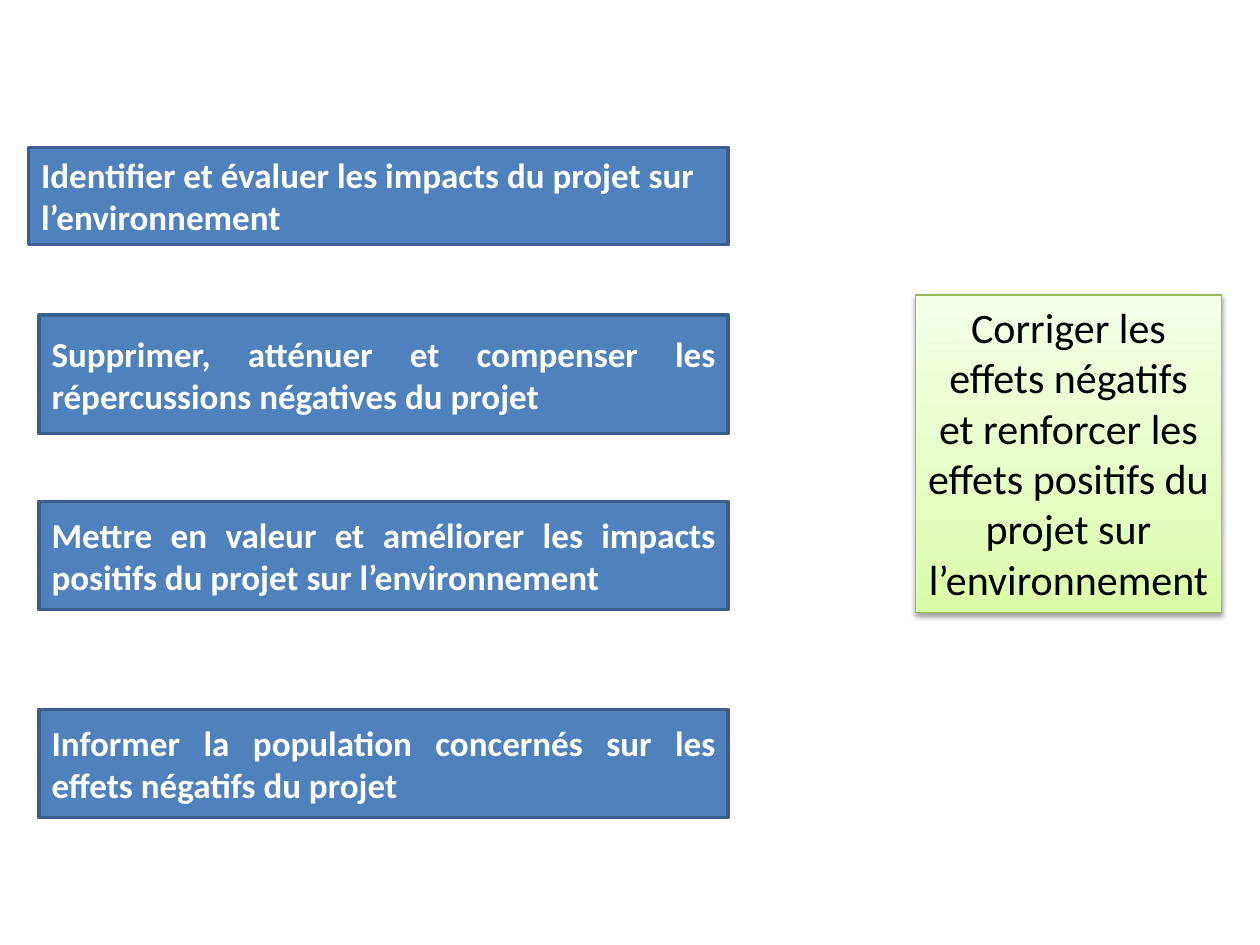
from lxml.etree import SubElement
from pptx import Presentation
from pptx.dml.color import RGBColor
from pptx.enum.shapes import MSO_SHAPE as Shape
from pptx.enum.text import MSO_ANCHOR as Anchor, MSO_AUTO_SIZE as AutoSize, PP_ALIGN as Align
from pptx.oxml.ns import qn
from pptx.util import Cm, Pt

WHITE = RGBColor(0xFF, 0xFF, 0xFF)
BLACK = RGBColor(0x00, 0x00, 0x00)
BLUE = RGBColor(0x4F, 0x81, 0xBD)
DARK_BLUE = RGBColor(0x3A, 0x5F, 0x8C)
GREEN = RGBColor(0x98, 0xB9, 0x55)
GREEN_STOPS = (
    (0, RGBColor(0xDA, 0xFD, 0xA7)),
    (35, RGBColor(0xE4, 0xFC, 0xC2)),
    (100, RGBColor(0xF5, 0xFF, 0xE7)),
)
FONT = "Calibri"
RIGHT_EDGE = 14.68

OBJECTIVES = (
    (0.58, 2.97, 1.96, Align.LEFT,
     "Identifier et évaluer les impacts du projet sur l’environnement"),
    (0.79, 6.35, 2.39, Align.JUSTIFY,
     "Supprimer, atténuer et compenser les répercussions négatives du projet"),
    (0.79, 10.11, 2.18, Align.JUSTIFY,
     "Mettre en valeur et améliorer les impacts positifs du projet sur l’environnement"),
    (0.79, 14.3, 2.18, Align.JUSTIFY,
     "Informer la population concernés sur les effets négatifs du projet"),
)
GOAL = "Corriger les effets négatifs et renforcer les effets positifs du projet sur l’environnement"


def add_box(slide, left, top, width, height, text, align, size, color, bold=False):
    shape = slide.shapes.add_shape(
        Shape.RECTANGLE, Cm(left), Cm(top), Cm(width), Cm(height))
    shape.shadow.inherit = False
    frame = shape.text_frame
    frame.word_wrap = True
    frame.vertical_anchor = Anchor.MIDDLE
    frame.text = text
    paragraph = frame.paragraphs[0]
    paragraph.alignment = align
    font = paragraph.runs[0].font
    font.name = FONT
    font.size = Pt(size)
    font.bold = bold
    font.color.rgb = color
    return shape


def set_line(shape, color, width):
    shape.line.color.rgb = color
    shape.line.width = Pt(width)


def add_color(parent, color):
    return SubElement(parent, qn("a:srgbClr"), val=str(color))


def set_gradient(shape, stops):
    shape.fill.gradient()
    shape.fill.gradient_angle = 90
    stop_list = shape.element.spPr.find(qn("a:gradFill")).find(qn("a:gsLst"))
    for stop in list(stop_list):
        stop_list.remove(stop)
    for position, color in stops:
        add_color(SubElement(stop_list, qn("a:gs"), pos=str(position * 1000)), color)


def set_shadow(shape):
    effects = shape.element.spPr.find(qn("a:effectLst"))
    shadow = SubElement(
        effects, qn("a:outerShdw"), blurRad=str(Pt(3.1)), dist=str(Pt(1.6)),
        dir="5400000", rotWithShape="0")
    SubElement(add_color(shadow, BLACK), qn("a:alpha"), val="38000")


def add_objective(slide, left, top, height, align, text):
    shape = add_box(slide, left, top, RIGHT_EDGE - left, height, text, align, 20, WHITE, True)
    shape.fill.solid()
    shape.fill.fore_color.rgb = BLUE
    set_line(shape, DARK_BLUE, 2)


def add_goal(slide):
    shape = add_box(slide, 18.46, 5.95, 6.16, 6.4, GOAL, Align.CENTER, 24, BLACK)
    shape.text_frame.vertical_anchor = Anchor.TOP
    shape.text_frame.auto_size = AutoSize.SHAPE_TO_FIT_TEXT
    set_gradient(shape, GREEN_STOPS)
    set_line(shape, GREEN, 0.75)
    set_shadow(shape)


def main():
    presentation = Presentation()
    presentation.slide_width = Cm(25.4)
    presentation.slide_height = Cm(19.05)
    slide = presentation.slides.add_slide(presentation.slide_layouts[6])
    for objective in OBJECTIVES:
        add_objective(slide, *objective)
    add_goal(slide)
    presentation.save("out.pptx")


main()
